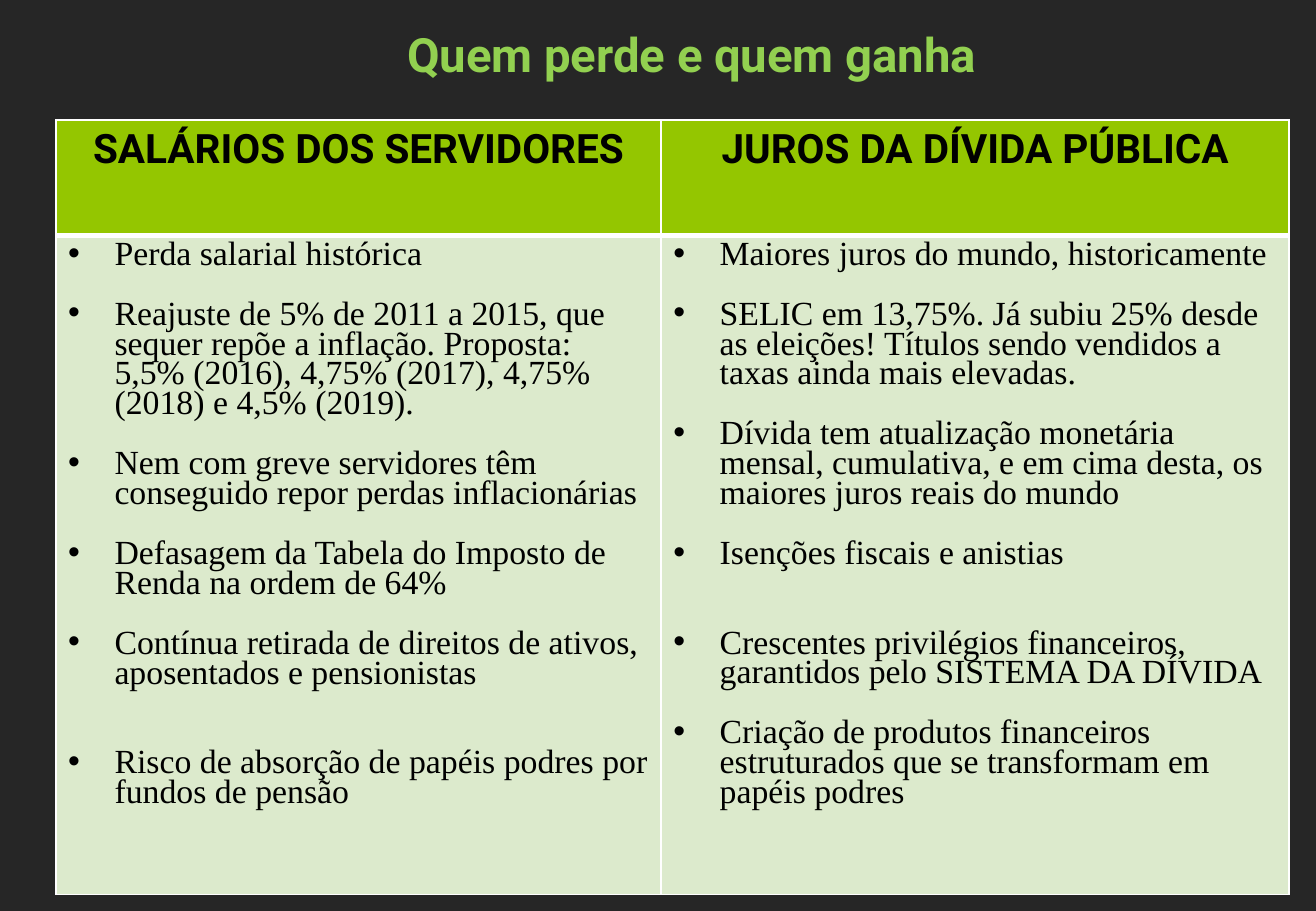
from lxml.etree import SubElement
from pptx import Presentation
from pptx.dml.color import RGBColor
from pptx.enum.text import MSO_ANCHOR as Anchor, MSO_AUTO_SIZE as AutoSize, PP_ALIGN as Align
from pptx.oxml.ns import qn
from pptx.util import Cm, Pt

BACKGROUND = RGBColor(0x26, 0x26, 0x26)
TITLE_GREEN = RGBColor(0x92, 0xD0, 0x50)
HEADER_GREEN = RGBColor(0x94, 0xC6, 0x00)
BODY_GREEN = RGBColor(0xDC, 0xEA, 0xCC)
BLACK = RGBColor(0, 0, 0)
WHITE = RGBColor(0xFF, 0xFF, 0xFF)

HEADING_FONT = "Roboto"
BODY_FONT = "Times New Roman"
LINE_GAP = 17.7  # points taken by one line of body text
INDENT = Cm(0.97)

# Each item: the lines left free above it, then its text
COLUMNS = [
    ("SALÁRIOS DOS SERVIDORES", 12.65, [
        (0, "Perda salarial histórica"),
        (1, "Reajuste de 5% de 2011 a 2015, que sequer repõe a inflação. Proposta: "
            "5,5% (2016), 4,75% (2017), 4,75% (2018) e 4,5% (2019)."),
        (1, "Nem com greve servidores têm conseguido repor perdas inflacionárias"),
        (1, "Defasagem da Tabela do Imposto de Renda na ordem de 64%"),
        (1, "Contínua retirada de direitos de ativos, aposentados e pensionistas"),
        (2, "Risco de absorção de papéis podres por fundos de pensão"),
    ]),
    ("JUROS DA DÍVIDA PÚBLICA", 13.13, [
        (0, "Maiores juros do mundo, historicamente"),
        (1, "SELIC em 13,75%. Já subiu 25% desde as eleições! Títulos sendo vendidos "
            "a taxas ainda mais elevadas."),
        (1, "Dívida tem atualização monetária mensal, cumulativa, e em cima desta, "
            "os maiores juros reais do mundo"),
        (1, "Isenções fiscais e anistias"),
        (2, "Crescentes privilégios financeiros, garantidos pelo SISTEMA DA DÍVIDA"),
        (1, "Criação de produtos financeiros estruturados que se transformam em "
            "papéis podres"),
    ]),
]


def write(paragraph, text, size, font=HEADING_FONT, color=BLACK, bold=False,
          align=Align.LEFT, spacing=1.0, before=0, bullet=False):
    paragraph.alignment = align
    paragraph.line_spacing = spacing
    paragraph.space_before = Pt(before)
    run = paragraph.add_run()
    run.text = text
    run.font.name = font
    run.font.size = Pt(size)
    run.font.bold = bold
    run.font.color.rgb = color
    if bullet:
        properties = paragraph._p.get_or_add_pPr()
        properties.set("marL", str(INDENT))
        properties.set("indent", str(-INDENT))
        SubElement(properties, qn("a:buFont"), typeface="Arial")
        SubElement(properties, qn("a:buChar"), char="•")


def format_cell(cell, fill, top=1, bottom=1):
    """Fill the cell and give it white borders, widths in points."""
    properties = cell._tc.get_or_add_tcPr()
    for side, width in (("L", 1), ("R", 1), ("T", top), ("B", bottom)):
        line = SubElement(properties, qn(f"a:ln{side}"), w=str(Pt(width)))
        solid = SubElement(line, qn("a:solidFill"))
        SubElement(solid, qn("a:srgbClr"), val=str(WHITE))
    cell.fill.solid()
    cell.fill.fore_color.rgb = fill
    cell.vertical_anchor = Anchor.TOP


def add_title(slide, left, top, width, height):
    title = slide.shapes.title
    title.left, title.top, title.width, title.height = left, top, width, height
    frame = title.text_frame
    frame.auto_size = AutoSize.NONE
    frame.word_wrap = True
    frame.vertical_anchor = Anchor.TOP
    write(frame.paragraphs[0], "Quem perde e quem ganha", 28, color=TITLE_GREEN,
          bold=True, align=Align.CENTER)


def add_comparison(slide, left, top, width, height, header_height):
    table = slide.shapes.add_table(2, len(COLUMNS), left, top, width, height).table
    table.rows[0].height = header_height
    table.rows[1].height = height - header_height
    for index, (heading, column_width, items) in enumerate(COLUMNS):
        table.columns[index].width = Cm(column_width)
        header, body = table.cell(0, index), table.cell(1, index)
        format_cell(header, HEADER_GREEN, bottom=3)
        format_cell(body, BODY_GREEN, top=3)
        write(header.text_frame.paragraphs[0], heading, 24, bold=True, align=Align.CENTER)
        frame = body.text_frame
        for number, (free_lines, text) in enumerate(items):
            paragraph = frame.add_paragraph() if number else frame.paragraphs[0]
            write(paragraph, text, 20, font=BODY_FONT, spacing=0.8,
                  before=free_lines * LINE_GAP, bullet=True)


def main():
    presentation = Presentation()
    presentation.slide_width = Cm(27.51)
    presentation.slide_height = Cm(19.05)
    slide = presentation.slides.add_slide(presentation.slide_layouts[5])
    slide.background.fill.solid()
    slide.background.fill.fore_color.rgb = BACKGROUND
    add_title(slide, Cm(1.96), Cm(0.41), Cm(24.99), Cm(4.8))
    add_comparison(slide, Cm(1.17), Cm(2.51), Cm(25.78), Cm(16.2), Cm(2.41))
    presentation.save("out.pptx")


if __name__ == "__main__":
    main()
